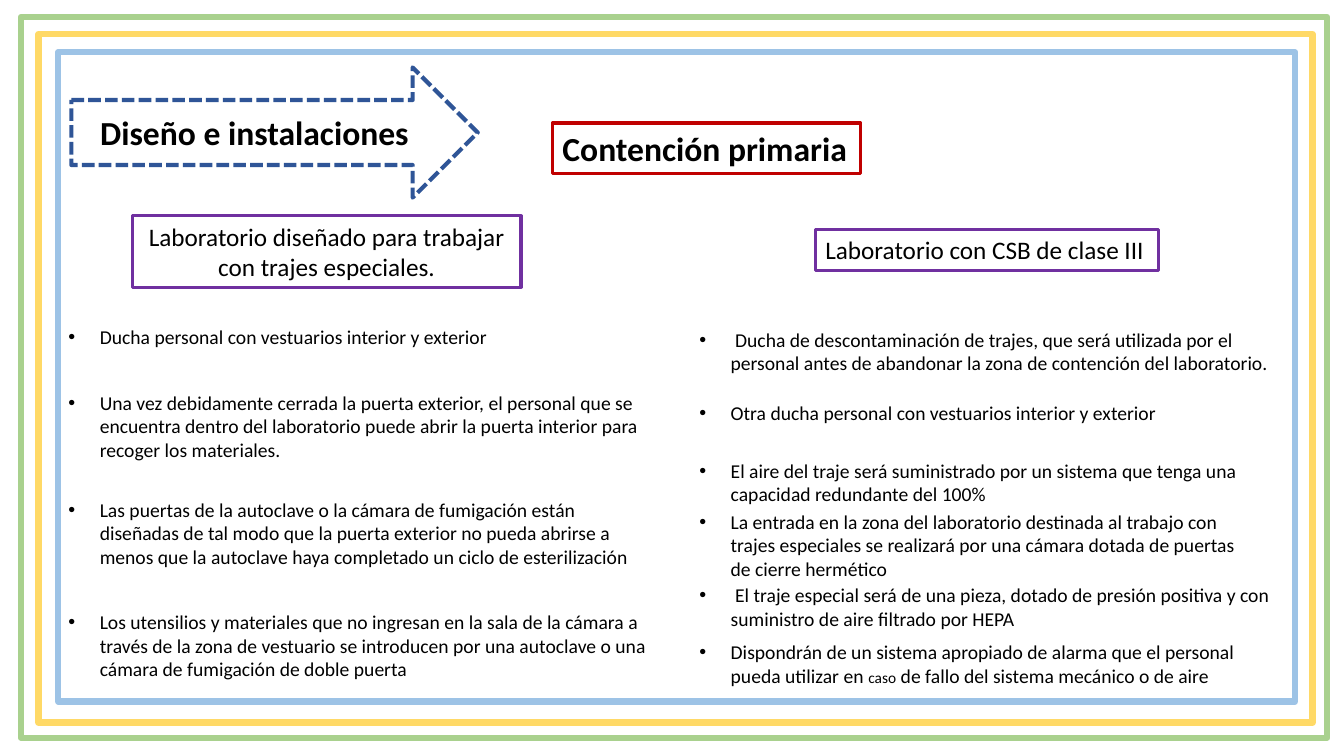
from lxml.etree import SubElement
from pptx import Presentation
from pptx.dml.color import RGBColor
from pptx.enum.dml import MSO_LINE as Dash
from pptx.enum.shapes import MSO_SHAPE as Preset
from pptx.enum.text import MSO_ANCHOR as Anchor, MSO_AUTO_SIZE as AutoSize, PP_ALIGN as Align
from pptx.oxml.ns import qn
from pptx.util import Cm, Pt

FONT = "Calibri"
BLACK = "000000"
FRAME_COLORS = ["A9D18E", "FFD966", "9DC3E6"]
FRAME_BOXES = [(0.53, 0.43, 32.92, 18.16), (0.97, 0.86, 32.11, 17.35), (1.47, 1.32, 31.17, 16.36)]
INDENT = 0.79

SUIT_LAB = "Laboratorio diseñado para trabajar con trajes especiales."
CABINET_LAB = "Laboratorio con CSB de clase III"
SUIT_ITEMS = [
    (0, ["Ducha personal con vestuarios interior y exterior"]),
    (30.5, ["Una vez debidamente cerrada la puerta exterior, el personal que se encuentra dentro "
            "del laboratorio puede abrir la puerta interior para recoger los materiales."]),
    (26, ["Las puertas de la autoclave o la cámara de fumigación están diseñadas de tal modo que la "
          "puerta exterior no pueda abrirse a menos que la autoclave haya completado un ciclo de "
          "esterilización"]),
    (30, ["Los utensilios y materiales que no ingresan en la sala de la cámara a través de la zona de "
          "vestuario se introducen por una autoclave o una cámara de fumigación de doble puerta"]),
]
CABINET_ITEMS = [
    (0, [" Ducha de descontaminación de trajes, que será utilizada por el personal antes de abandonar "
         "la zona de contención del laboratorio."]),
    (19, ["Otra ducha personal con vestuarios interior y exterior"]),
    (24, ["El aire del traje será suministrado por un sistema que tenga una capacidad redundante "
          "del 100%"]),
    (3, ["La entrada en la zona del laboratorio destinada al trabajo con", "\n",
         "trajes especiales se realizará por una cámara dotada de puertas", "\n",
         "de cierre hermético"]),
    (2, [" El traje especial será de una pieza, dotado de presión positiva y con suministro de aire "
         "ﬁltrado por HEPA"]),
    (7, ["Dispondrán de un sistema apropiado de alarma que el personal pueda utilizar en ",
         ("caso", 11), " de fallo del sistema mecánico o de aire"]),
]


def rgb(color):
    """Turn a hex string into a colour."""
    return RGBColor.from_string(color)


def place(part, box):
    """Move a part to a box given in centimetres."""
    part.left, part.top, part.width, part.height = map(Cm, box)


def add_run(paragraph, text, size, bold=False):
    """Append one formatted run."""
    run = paragraph.add_run()
    run.text = text
    run.font.name, run.font.size, run.font.bold = FONT, Pt(size), bold
    run.font.color.rgb = rgb(BLACK)


def outline(part, color, width):
    """Leave a part unfilled and draw its border."""
    part.fill.background()
    part.line.color.rgb = rgb(color)
    part.line.width = Pt(width)


def add_outlined(slide, preset, box, color, width):
    """Add a preset shape with a border only."""
    part = slide.shapes.add_shape(preset, *map(Cm, box))
    part.shadow.inherit = False
    outline(part, color, width)
    return part


def draw_frames(slide):
    """Draw the three nested borders of the page."""
    for box, color in zip(FRAME_BOXES, FRAME_COLORS):
        add_outlined(slide, Preset.RECTANGLE, box, color, 4.5)


def draw_header(slide, box):
    """Draw the section arrow and the boxed title."""
    left, top = box
    section = add_outlined(slide, Preset.RIGHT_ARROW, (left, top, 10.24, 3.28), "2F5597", 3)
    section.fill.solid()
    section.fill.fore_color.rgb = rgb("FFFFFF")
    section.line.dash_style = Dash.SQUARE_DOT
    section.text_frame.word_wrap = True
    section.text_frame.vertical_anchor = Anchor.MIDDLE
    section_line = section.text_frame.paragraphs[0]
    section_line.alignment = Align.CENTER
    add_run(section_line, "Diseño e instalaciones ", 24, True)

    title = slide.shapes.title
    place(title, (left + 12.12, top + 1.4, 7.77, 1.27))
    outline(title, "C00000", 2.25)
    title.text_frame.auto_size = AutoSize.NONE
    title.text_frame.vertical_anchor = Anchor.TOP
    title_line = title.text_frame.paragraphs[0]
    title_line.alignment = Align.LEFT
    add_run(title_line, "Contención primaria", 24, True)


def draw_heading(slide, box, text, wrap):
    """Draw the framed name of a laboratory."""
    heading = add_outlined(slide, Preset.RECTANGLE, box, "7030A0", 2.25)
    heading.text_frame.word_wrap = wrap
    heading.text_frame.vertical_anchor = Anchor.TOP
    heading_line = heading.text_frame.paragraphs[0]
    heading_line.alignment = Align.CENTER if wrap else Align.LEFT
    add_run(heading_line, text, 18)


def fill_list(body, box, items):
    """Fill a body placeholder with spaced bullet items."""
    place(body, box)
    frame = body.text_frame
    frame.auto_size = AutoSize.NONE
    frame.vertical_anchor = Anchor.TOP
    for number, (gap, pieces) in enumerate(items):
        item = frame.add_paragraph() if number else frame.paragraphs[0]
        item.space_before, item.space_after, item.line_spacing = Pt(gap), Pt(0), 1.0
        properties = item._p.get_or_add_pPr()
        properties.set("marL", str(Cm(INDENT)))
        properties.set("indent", str(-Cm(INDENT)))
        SubElement(properties, qn("a:buFont"), typeface="Arial")
        SubElement(properties, qn("a:buChar"), char="•")
        for piece in pieces:
            if piece == "\n":
                item.add_line_break()
            else:
                text, size = piece if isinstance(piece, tuple) else (piece, 14)
                add_run(item, text, size)


def draw_column(slide, body, box, heading, heading_box, wrap, items):
    """Draw a laboratory heading with its list below."""
    left, top, width, height = box
    inset, drop, heading_width, heading_height = heading_box
    draw_heading(slide, (left + inset, top + drop, heading_width, heading_height), heading, wrap)
    list_drop = 2.65
    fill_list(body, (left, top + list_drop, width, height - list_drop), items)


def main():
    """Build and save the slide."""
    deck = Presentation()
    deck.slide_width, deck.slide_height = Cm(33.87), Cm(19.05)
    slide = deck.slides.add_slide(deck.slide_layouts[3])
    suit_list, cabinet_list = slide.placeholders[1], slide.placeholders[2]
    draw_frames(slide)
    draw_header(slide, (1.8, 1.7))
    draw_column(slide, suit_list, (1.47, 5.4, 15.21, 11.97),
                SUIT_LAB, (1.86, 0.04, 9.8, 1.8), True, SUIT_ITEMS)
    draw_column(slide, cabinet_list, (17.37, 5.48, 15, 12.07),
                CABINET_LAB, (3.18, 0.31, 8.64, 1.02), False, CABINET_ITEMS)
    deck.save("out.pptx")


if __name__ == "__main__":
    main()
